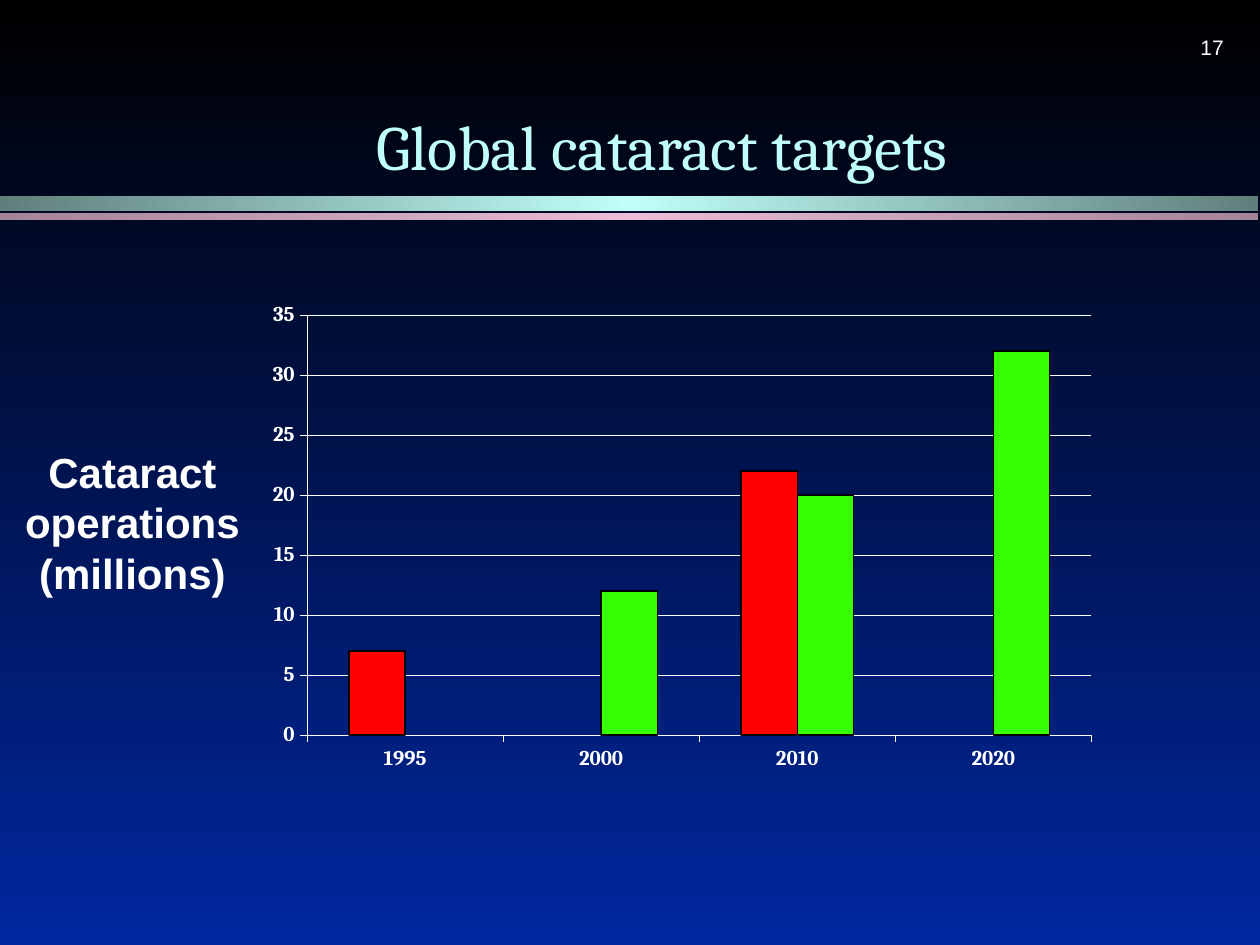
from copy import deepcopy
from dataclasses import dataclass

from lxml.etree import SubElement
from pptx import Presentation
from pptx.chart.data import CategoryChartData
from pptx.dml.color import RGBColor
from pptx.dml.fill import FillFormat
from pptx.dml.line import LineFormat
from pptx.enum.chart import XL_CHART_TYPE, XL_TICK_LABEL_POSITION, XL_TICK_MARK
from pptx.enum.shapes import MSO_SHAPE
from pptx.enum.text import MSO_ANCHOR, PP_ALIGN
from pptx.oxml.ns import qn
from pptx.slide import Slide
from pptx.text.text import Font
from pptx.util import Cm, Pt

BLACK = RGBColor(0x00, 0x00, 0x00)
NAVY = RGBColor(0x00, 0x27, 0x9F)
WHITE = RGBColor(0xFF, 0xFF, 0xFF)
AQUA = RGBColor(0xC0, 0xFE, 0xF9)
TEAL = RGBColor(0x60, 0x7F, 0x7C)
PINK = RGBColor(0xEA, 0xBC, 0xD7)
MAUVE = RGBColor(0xA4, 0x84, 0x97)
RED = RGBColor(0xFF, 0x00, 0x00)
GREEN = RGBColor(0x37, 0xFF, 0x01)


@dataclass
class Band:
    top: float
    height: float
    edge: RGBColor
    middle: RGBColor


@dataclass
class Label:
    text: str
    box: tuple[float, float, float, float]
    size: int
    face: str
    color: RGBColor
    bold: bool = False
    wrap: bool = False
    align: PP_ALIGN = PP_ALIGN.CENTER
    anchor: MSO_ANCHOR = MSO_ANCHOR.MIDDLE


@dataclass
class Series:
    name: str
    values: tuple[int | None, ...]
    color: RGBColor


BANDS = [
    Band(3.96, 0.3, TEAL, AQUA),
    Band(4.29, 0.15, MAUVE, PINK),
]
LABELS = [
    Label("17", (23.95, 0.58, 1.04, 0.76), 12, "Arial", WHITE,
          align=PP_ALIGN.LEFT, anchor=MSO_ANCHOR.TOP),
    Label("Global cataract targets", (3.66, 0.64, 19.38, 3.18), 36, "Cambria",
          AQUA, wrap=True, anchor=MSO_ANCHOR.BOTTOM),
    Label("Cataract\noperations\n(millions)", (0.23, 8.86, 4.88, 3.33), 24,
          "Arial", WHITE, bold=True),
]
YEARS = ("1995", "2000", "2010", "2020")
SERIES = [
    Series("Series 1", (7, None, 22, None), RED),
    Series("Series 2", (None, 12, 20, 32), GREEN),
]
PLOT = {"x": 0.076, "y": 0.064, "w": 0.897, "h": 0.759}


def set_font(font: Font, face: str, size: float, color: RGBColor, bold: bool) -> None:
    font.name = face
    font.size = Pt(size)
    font.bold = bold
    font.color.rgb = color


def set_line(line: LineFormat, color: RGBColor, width: float) -> None:
    line.color.rgb = color
    line.width = Pt(width)


def set_stops(fill: FillFormat, colors: list[RGBColor]) -> None:
    """Spread the colours evenly over the gradient's stops."""
    for i, (stop, color) in enumerate(zip(fill.gradient_stops, colors)):
        stop.position = i / (len(colors) - 1)
        stop.color.rgb = color


def add_band(slide: Slide, band: Band) -> None:
    shape = slide.shapes.add_shape(
        MSO_SHAPE.RECTANGLE, 0, Cm(band.top), Cm(25.37), Cm(band.height))
    shape.shadow.inherit = False
    shape.line.fill.background()
    shape.fill.gradient()
    shape.fill.gradient_angle = 0
    first = shape.element.xpath(".//a:gs")[0]
    first.addnext(deepcopy(first))
    set_stops(shape.fill, [band.edge, band.middle, band.edge])


def add_label(slide: Slide, label: Label) -> None:
    frame = slide.shapes.add_textbox(*map(Cm, label.box)).text_frame
    frame.word_wrap = label.wrap
    frame.vertical_anchor = label.anchor
    frame.text = label.text
    for para in frame.paragraphs:
        para.alignment = label.align
        for run in para.runs:
            set_font(run.font, label.face, label.size, label.color, label.bold)


def set_plot(chart) -> None:
    """Fix the inner plot area as shares of the chart's size."""
    area = chart.element.find(".//" + qn("c:plotArea"))
    for old in area.findall(qn("c:layout")):
        area.remove(old)
    layout = SubElement(area, qn("c:layout"))
    area.insert(0, layout)
    manual = SubElement(layout, qn("c:manualLayout"))
    modes = {"layoutTarget": "inner", "xMode": "edge", "yMode": "edge"}
    for tag, value in (modes | PLOT).items():
        SubElement(manual, qn("c:" + tag)).set("val", str(value))


def add_graph(slide: Slide) -> None:
    data = CategoryChartData()
    data.categories = YEARS
    for item in SERIES:
        data.add_series(item.name, item.values)
    chart = slide.shapes.add_chart(
        XL_CHART_TYPE.COLUMN_CLUSTERED,
        Cm(4.85), Cm(5.64), Cm(17.63), Cm(11.15), data).chart
    chart.has_legend = False
    chart.has_title = False
    set_font(chart.font, "Cambria", 6.6, BLACK, True)
    set_plot(chart)

    plot = chart.plots[0]
    plot.gap_width = 150
    plot.overlap = 0
    plot.vary_by_categories = False
    for bars, item in zip(plot.series, SERIES):
        bars.invert_if_negative = False
        bars.format.fill.solid()
        bars.format.fill.fore_color.rgb = item.color
        set_line(bars.format.line, BLACK, 0.82)

    for axis in (chart.category_axis, chart.value_axis):
        axis.major_tick_mark = XL_TICK_MARK.OUTSIDE
        axis.minor_tick_mark = XL_TICK_MARK.NONE
        set_font(axis.tick_labels.font, "Cambria", 12, WHITE, True)
        set_line(axis.format.line, WHITE, 0.21)
    chart.category_axis.tick_label_position = XL_TICK_LABEL_POSITION.LOW
    scale = chart.value_axis
    scale.minimum_scale, scale.maximum_scale, scale.major_unit = 0, 35, 5
    scale.has_major_gridlines = True
    set_line(scale.major_gridlines.format.line, WHITE, 0.21)


def main() -> None:
    deck = Presentation()
    deck.slide_width, deck.slide_height = Cm(25.4), Cm(19.05)
    slide = deck.slides.add_slide(deck.slide_layouts[6])
    back = slide.background.fill
    back.gradient()
    back.gradient_angle = 270
    set_stops(back, [BLACK, NAVY])
    for band in BANDS:
        add_band(slide, band)
    add_graph(slide)
    for label in LABELS:
        add_label(slide, label)
    deck.save("out.pptx")


if __name__ == "__main__":
    main()
